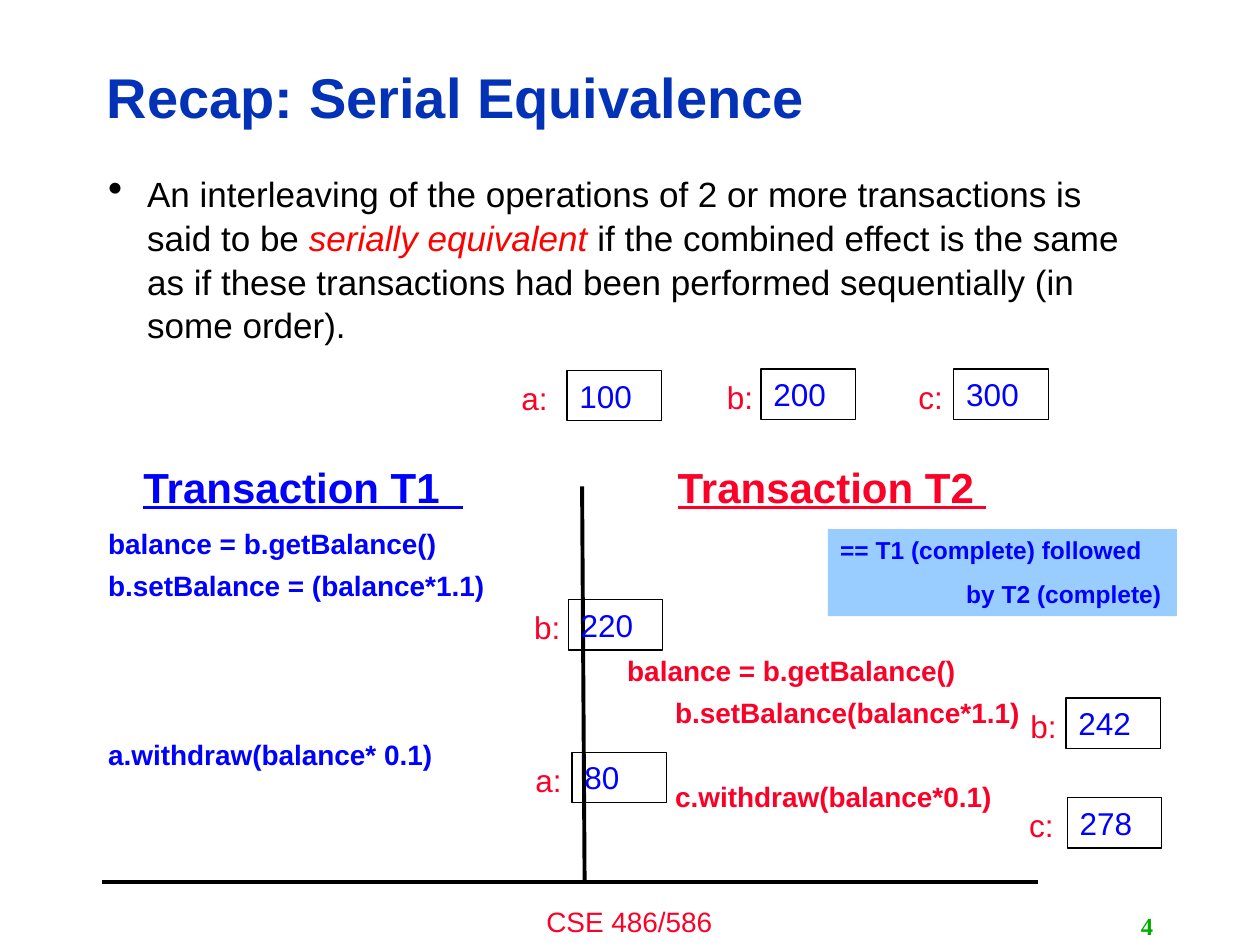
from pptx import Presentation
from pptx.dml.color import RGBColor
from pptx.enum import shapes, text
from pptx.oxml.ns import qn
from pptx.util import Inches, Pt
from lxml import etree

BLACK = RGBColor(0x00, 0x00, 0x00)
NAVY = RGBColor(0x03, 0x32, 0xB7)
BLUE = RGBColor(0x00, 0x00, 0xFF)
RED = RGBColor(0xFC, 0x01, 0x28)
BRIGHT_RED = RGBColor(0xFF, 0x00, 0x00)
GREEN = RGBColor(0x00, 0xAE, 0x00)
SKY = RGBColor(0x99, 0xCC, 0xFF)

LEFT, CENTER, RIGHT = text.PP_ALIGN.LEFT, text.PP_ALIGN.CENTER, text.PP_ALIGN.RIGHT


def add_run(p, words, size, color, font="Arial", **style):
    r = p.add_run()
    r.text = words
    r.font.name, r.font.size = font, Pt(size)
    r.font.color.rgb = color
    for name, value in style.items():
        setattr(r.font, name, value)


def add_box(s, x, y, w, h, align=LEFT, wrap=True):
    """Add a text box and return its first paragraph."""
    tf = s.shapes.add_textbox(Inches(x), Inches(y), Inches(w), Inches(h)).text_frame
    tf.word_wrap = wrap
    tf.paragraphs[0].alignment = align
    return tf.paragraphs[0]


def add_rect(s, x, y, w, h, fill=None, line=None):
    sp = s.shapes.add_shape(shapes.MSO_SHAPE.RECTANGLE,
                            Inches(x), Inches(y), Inches(w), Inches(h))
    sp.shadow.inherit = False
    for part, color in ((sp.fill, fill), (sp.line.fill, line)):
        if color is None:
            part.background()
        else:
            part.solid()
            part.fore_color.rgb = color
    sp.text_frame.vertical_anchor = text.MSO_ANCHOR.TOP
    sp.text_frame.paragraphs[0].alignment = LEFT
    return sp


def add_rule(s, x1, y1, x2, y2):
    ln = s.shapes.add_connector(shapes.MSO_CONNECTOR.STRAIGHT,
                                Inches(x1), Inches(y1), Inches(x2), Inches(y2))
    ln.line.color.rgb, ln.line.width = BLACK, Pt(2.25)
    etree.SubElement(ln._element.spPr, qn("a:effectLst"))


def set_tab(p, pos):
    tabs = etree.SubElement(p._p.get_or_add_pPr(), qn("a:tabLst"))
    etree.SubElement(tabs, qn("a:tab"), pos=str(Inches(pos)), algn="l")


def add_definition(s, x, y, w, h):
    p = add_box(s, x, y, w, h)
    p.line_spacing = 1.04
    pPr = p._p.get_or_add_pPr()
    pPr.set("marL", str(Inches(0.31)))
    pPr.set("indent", str(Inches(-0.31)))
    color = etree.SubElement(pPr, qn("a:buClr"))
    etree.SubElement(color, qn("a:srgbClr"), val=str(BLACK))
    etree.SubElement(pPr, qn("a:buSzPct"), val="120000")
    etree.SubElement(pPr, qn("a:buChar"), char="•")
    add_run(p, "An interleaving of the operations of 2 or more transactions is said to be ",
            20, BLACK)
    add_run(p, "serially equivalent ", 20, BRIGHT_RED, italic=True)
    add_run(p, "if the combined effect is the same as if these transactions had been "
               "performed sequentially (in some order).", 20, BLACK)


def add_schedule(s, x, y, w, h):
    """Headings, timed operations and the rules between the transactions."""
    p = add_box(s, x + 0.28, y, 3, 0.48)
    add_run(p, "Transaction T1  ", 24, BLUE, bold=True, underline=True)
    p = add_box(s, x + 3.32, y, 4.2, 0.48)
    set_tab(p, 1.2)
    add_run(p, "\tTransaction T2 ", 24, RED, bold=True, underline=True)

    # Operations: time step, indent, wording, colour
    steps = [
        (0, 0, "balance = b.getBalance()", BLUE),
        (1, 0, "b.setBalance = (balance*1.1)", BLUE),
        (3, 4.12, "balance = b.getBalance()", RED),
        (4, 4.5, "b.setBalance(balance*1.1)", RED),
        (5, 0, "a.withdraw(balance* 0.1)", BLUE),
        (6, 4.5, "c.withdraw(balance*0.1)", RED),
    ]
    for step, indent, words, color in steps:
        p = add_box(s, x + indent, y + 0.52 + 0.335 * step, 3.4, 0.35)
        add_run(p, words, 16, color, bold=True)

    add_rule(s, x + 3.86, y + 0.25, x + 3.88, y + h)
    add_rule(s, x + 0.05, y + h, x + w, y + h)


def add_variable(s, x, y, name, value, label_gap):
    """A boxed value with its name to the left."""
    sp = add_rect(s, x, y, 0.75, 0.4, line=BLACK)
    sp.line.width = Pt(0.75)
    add_run(sp.text_frame.paragraphs[0], value, 18, BLUE)
    add_run(add_box(s, x - label_gap, y + 0.02, 0.56, 0.37), name + ":", 18, RED)


def add_order_note(s, x, y, w, h):
    tf = add_rect(s, x, y, w, h, fill=SKY).text_frame
    p = tf.paragraphs[0]
    add_run(p, "== T1 (complete) followed", 14, BLUE, bold=True)
    p = tf.add_paragraph()
    p.alignment, p.space_before = LEFT, Pt(8)
    set_tab(p, 1)
    add_run(p, "\tby T2 (complete)", 14, BLUE, bold=True)


def main():
    prs = Presentation()
    prs.slide_width, prs.slide_height = Inches(10), Inches(7.5)
    s = prs.slides.add_slide(prs.slide_layouts[6])

    # Title and definition
    p = add_box(s, 0.75, 0.45, 7.98, 0.63)
    add_run(p, "Recap: Serial Equivalence", 32, NAVY, bold=True)
    add_definition(s, 0.76, 1.31, 8.4, 1.5)

    # Schedule and the values before and after each write
    add_schedule(s, 0.76, 3.61, 7.48, 3.39)
    variables = [
        (4.5, 2.94, "a", "100", 0.46),
        (6.04, 2.93, "b", "200", 0.37),
        (7.57, 2.93, "c", "300", 0.38),
        (4.51, 4.76, "b", "220", 0.37),
        (8.46, 5.54, "b", "242", 0.38),
        (4.54, 5.97, "a", "80", 0.39),
        (8.47, 6.33, "c", "278", 0.4),
    ]
    for variable in variables:
        add_variable(s, *variable)
    add_order_note(s, 6.57, 4.2, 2.77, 0.69)

    # Footer and slide number
    add_run(add_box(s, 3.33, 7.13, 3.33, 0.37, CENTER), "CSE 486/586", 16, RED)
    add_run(add_box(s, 7.17, 7.18, 2.08, 0.32, RIGHT), "4", 14, GREEN,
            "Times New Roman", bold=True)

    prs.save("out.pptx")


if __name__ == "__main__":
    main()
